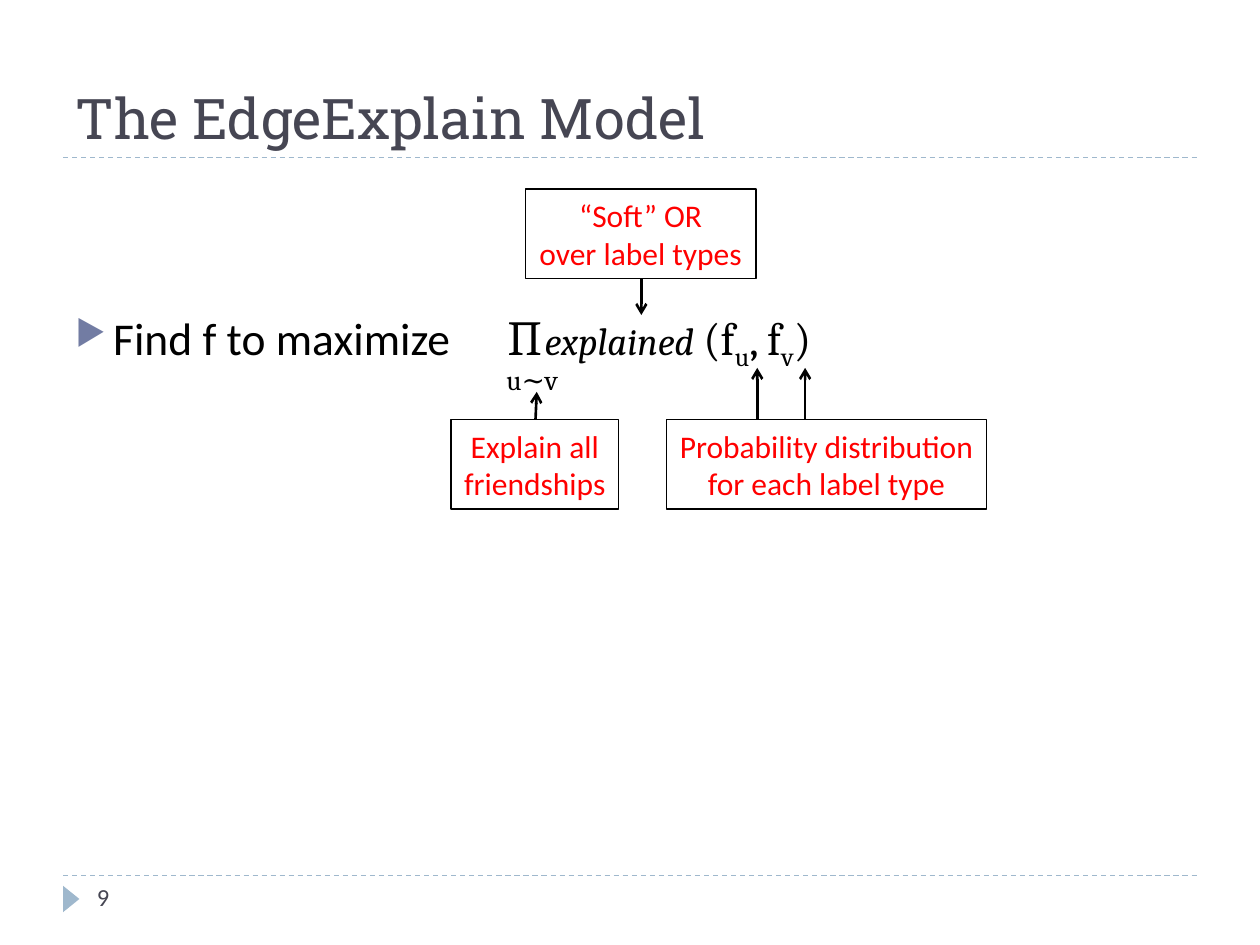
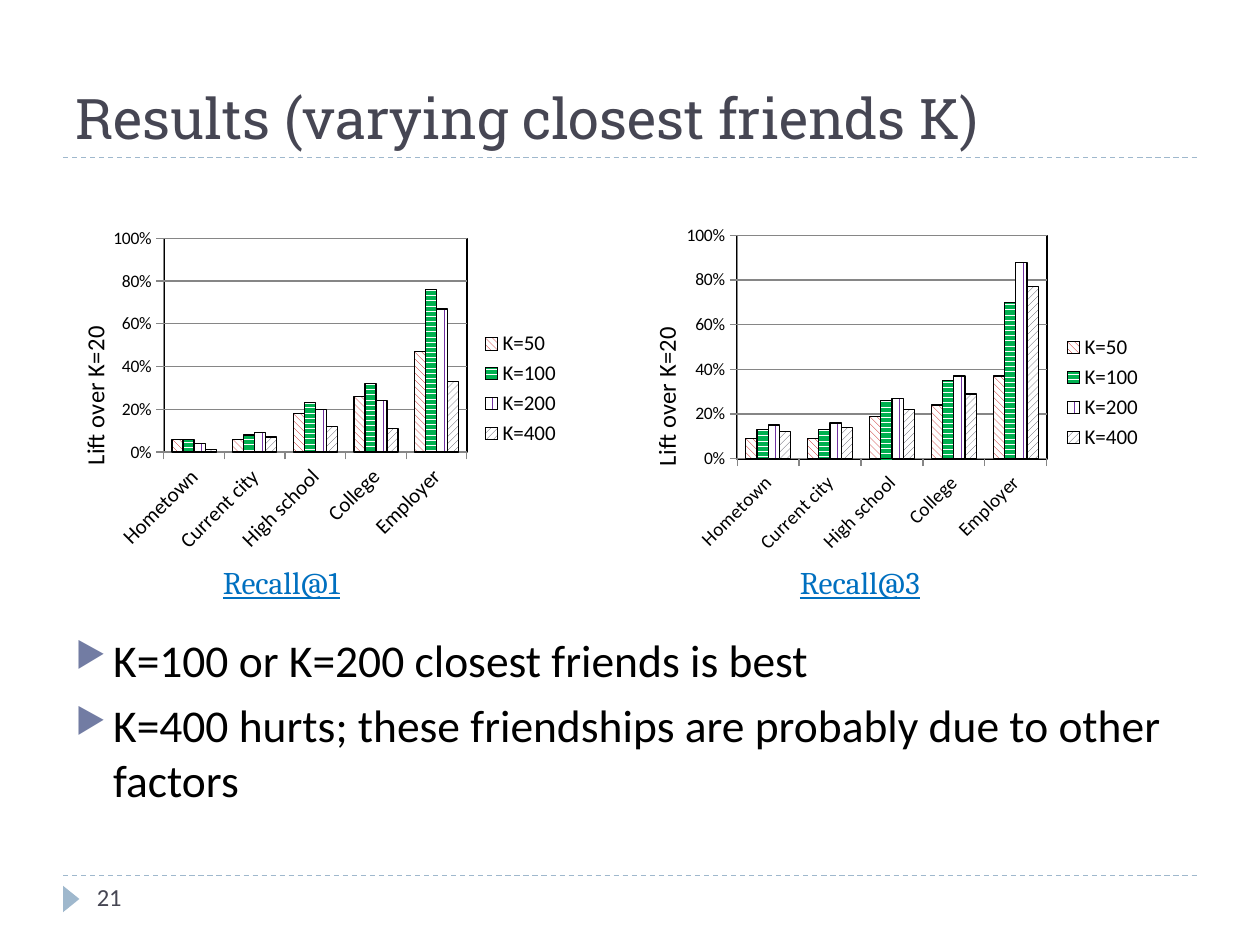
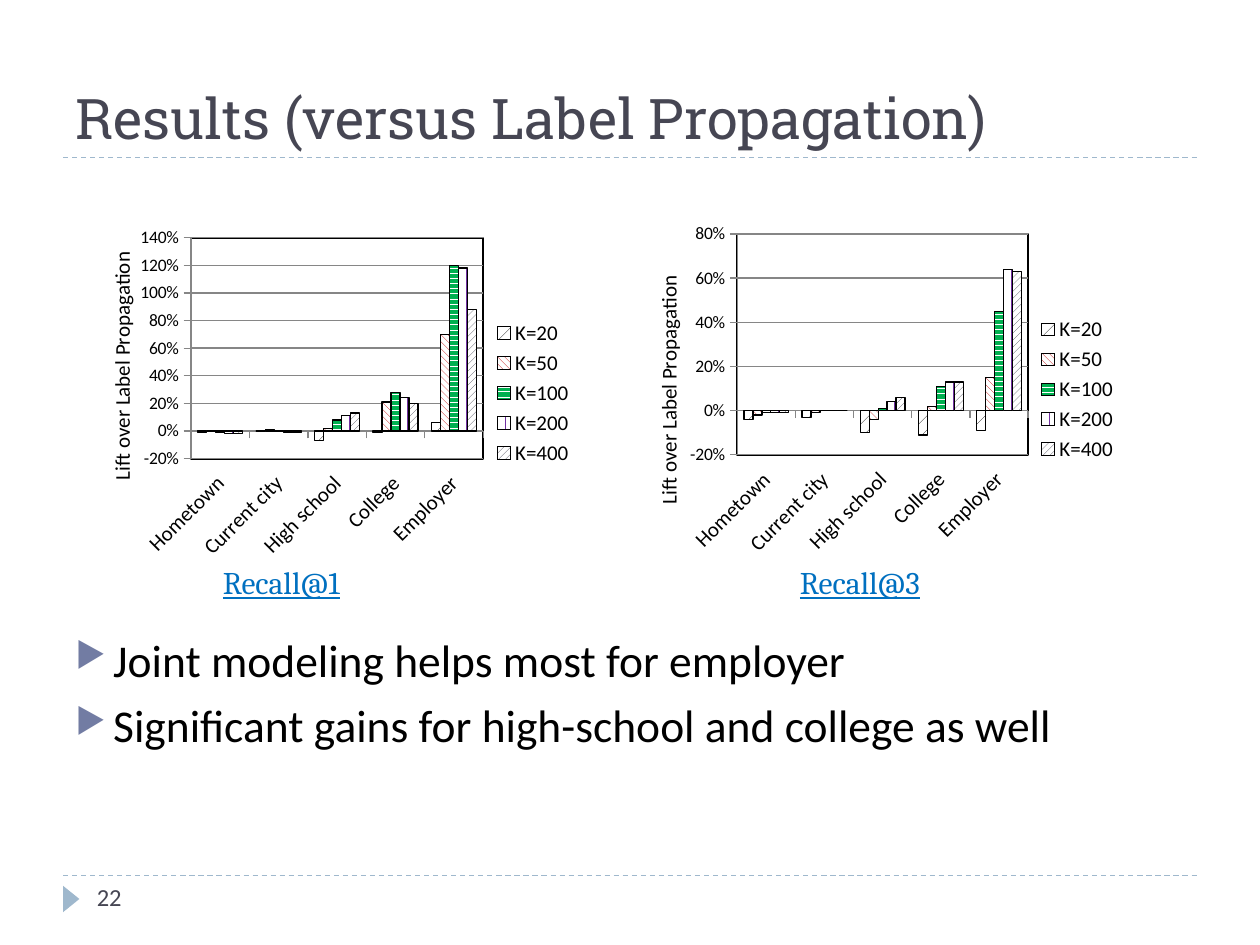
from lxml.etree import SubElement
from pptx import Presentation
from pptx.chart.data import CategoryChartData
from pptx.dml.color import RGBColor
from pptx.enum.chart import XL_CHART_TYPE, XL_LEGEND_POSITION, XL_TICK_LABEL_POSITION
from pptx.enum.dml import MSO_LINE, MSO_PATTERN
from pptx.enum.shapes import MSO_CONNECTOR, MSO_SHAPE
from pptx.enum.text import MSO_ANCHOR, PP_ALIGN
from pptx.oxml import parse_xml
from pptx.oxml.ns import nsdecls, qn
from pptx.util import Pt

PX = 9144  # 100 px to the inch
BLACK, WHITE, INK, RED, LINK = "000000", "FFFFFF", "464653", "FF0000", "0070C0"
RULE, BULLET, GRID = "9FB8CD", "727CA3", "868686"
BODY_FONT, MATH_FONT, TITLE_FONT = "Calibri", "Cambria", "Roboto Slab"
LABEL_TYPES = ["Hometown", "Current city", "High school", "College", "Employer"]
PATTERNS = {
    "K=20": (MSO_PATTERN.PERCENT_10, BLACK),
    "K=50": (MSO_PATTERN.WIDE_DOWNWARD_DIAGONAL, "C00000"),
    "K=100": (MSO_PATTERN.DARK_HORIZONTAL, "00B050"),
    "K=200": (MSO_PATTERN.DASHED_VERTICAL, "7030A0"),
    "K=400": (MSO_PATTERN.WIDE_UPWARD_DIAGONAL, INK),
}


def color(hex_value):
    return RGBColor.from_string(hex_value)


def px(*lengths):
    return [length * PX for length in lengths]


def set_font(font, size, name=BODY_FONT, ink=BLACK):
    font.size, font.name, font.bold = Pt(size), name, False
    font.color.rgb = color(ink)


def place_in_chart(element, **fractions):
    """Give a plot area or an axis title a manual layout, in fractions of the chart."""
    for old in element.findall(qn("c:layout")):
        element.remove(old)
    layout = parse_xml(f"<c:layout {nsdecls('c')}/>")
    manual = SubElement(layout, qn("c:manualLayout"))
    if "w" in fractions:
        SubElement(manual, qn("c:layoutTarget"), val="inner")
    for axis in "xy":
        SubElement(manual, qn(f"c:{axis}Mode"), val="edge")
    for side, fraction in fractions.items():
        SubElement(manual, qn(f"c:{side}"), val=str(fraction))
    element.insert(0 if element.find(qn("c:tx")) is None else 1, layout)


class Deck:
    def __init__(self):
        self.prs = Presentation()
        self.prs.slide_width, self.prs.slide_height = px(1000, 750)
        self.slide = None

    def start(self, title, number):
        """Add a slide with its title, rules, corner marker and number."""
        self.slide = self.prs.slides.add_slide(self.prs.slide_layouts[5])
        heading = self.slide.shapes.title
        heading.left, heading.top, heading.width, heading.height = px(50, 17, 900, 108)
        heading.text_frame.vertical_anchor = MSO_ANCHOR.BOTTOM
        paragraph = heading.text_frame.paragraphs[0]
        paragraph.alignment = PP_ALIGN.LEFT
        self.run(paragraph, title, 32, TITLE_FONT, INK)
        for y in (695, 125):
            self.line(50, y, 950, y, RULE, 0.75).line.dash_style = MSO_LINE.DASH
        marker = self.shape(MSO_SHAPE.ISOSCELES_TRIANGLE, 46, 707, 21, 13)
        marker.rotation = 90
        marker.fill.solid()
        marker.fill.fore_color.rgb = color(RULE)
        marker.line.fill.background()
        self.text(67, 695, 217, 40, str(number), 14, ink=INK)

    def run(self, paragraph, text, size, font=BODY_FONT, ink=BLACK,
            italic=None, underline=None, baseline=0):
        run = paragraph.add_run()
        run.text = text
        set_font(run.font, size, font, ink)
        run.font.italic, run.font.underline = italic, underline
        if baseline:
            run._r.get_or_add_rPr().set("baseline", str(baseline * 1000))

    def frame(self, x, y, w, h):
        """Add a wrapping text box and return its text frame."""
        frame = self.slide.shapes.add_textbox(*px(x, y, w, h)).text_frame
        frame.word_wrap = True
        return frame

    def text(self, x, y, w, h, text, size, font=BODY_FONT, ink=BLACK, **style):
        self.run(self.frame(x, y, w, h).paragraphs[0], text, size, font, ink, **style)

    def bullets(self, x, y, w, h, items):
        frame = self.frame(x, y, w, h)
        for index, item in enumerate(items):
            paragraph = frame.add_paragraph() if index else frame.paragraphs[0]
            paragraph.space_after = Pt(6)
            properties = paragraph._p.get_or_add_pPr()
            properties.set("marL", str(30 * PX))
            properties.set("indent", str(-30 * PX))
            tint = SubElement(properties, qn("a:buClr"))
            SubElement(tint, qn("a:srgbClr"), val=BULLET)
            SubElement(properties, qn("a:buSzPct"), val="76000")
            SubElement(properties, qn("a:buChar"), char="▶")
            self.run(paragraph, item, 26)

    def shape(self, kind, x, y, w, h):
        shape = self.slide.shapes.add_shape(kind, *px(x, y, w, h))
        shape.shadow.inherit = False
        return shape

    def callout(self, x, y, w, h, *lines):
        box = self.shape(MSO_SHAPE.RECTANGLE, x, y, w, h)
        box.fill.background()
        box.line.color.rgb, box.line.width = color(BLACK), Pt(0.75)
        box.text_frame.word_wrap = True
        paragraph = box.text_frame.paragraphs[0]
        paragraph.alignment = PP_ALIGN.CENTER
        for index, line in enumerate(lines):
            if index:
                paragraph.add_line_break()
            self.run(paragraph, line, 18, ink=RED)

    def line(self, x1, y1, x2, y2, ink=BLACK, width=1.5):
        line = self.slide.shapes.add_connector(MSO_CONNECTOR.STRAIGHT, *px(x1, y1, x2, y2))
        line.line.color.rgb, line.line.width = color(ink), Pt(width)
        SubElement(line._element.spPr, qn("a:effectLst"))
        return line

    def arrow(self, x1, y1, x2, y2):
        arrow = self.line(x1, y1, x2, y2)
        SubElement(arrow.line._get_or_add_ln(), qn("a:tailEnd"), type="arrow")

    def lift_chart(self, x, y, w, h, series, low, high, title, title_size, title_y, label_size=12):
        """Add a clustered column chart of the lift for each label type."""
        data = CategoryChartData(number_format="0%")
        data.categories = LABEL_TYPES
        for name, lifts in series.items():
            data.add_series(name, lifts)
        chart = self.slide.shapes.add_chart(
            XL_CHART_TYPE.COLUMN_CLUSTERED, *px(x, y, w, h), data).chart
        set_font(chart.font, 10)
        chart.has_title = False
        chart.has_legend = True
        chart.legend.position = XL_LEGEND_POSITION.RIGHT
        chart.legend.include_in_layout = False
        set_font(chart.legend.font, 12)

        plot = chart.plots[0]
        plot.gap_width, plot.overlap, plot.vary_by_categories = 150, 0, False
        for columns in plot.series:
            columns.invert_if_negative = False
            fill = columns.format.fill
            fill.patterned()
            fill.pattern, ink = PATTERNS[columns.name]
            fill.fore_color.rgb, fill.back_color.rgb = color(ink), color(WHITE)
            columns.format.line.color.rgb = color(BLACK)
            columns.format.line.width = Pt(0.75)

        lift, labels = chart.value_axis, chart.category_axis
        lift.minimum_scale, lift.maximum_scale, lift.major_unit = low, high, 0.2
        lift.tick_labels.number_format = "0%"
        lift.tick_labels.number_format_is_linked = False
        for rule in (lift.format, lift.major_gridlines.format, labels.format):
            rule.line.color.rgb, rule.line.width = color(GRID), Pt(0.75)
        self.run(lift.axis_title.text_frame.paragraphs[0], title, title_size)
        place_in_chart(lift.axis_title._element, x=0.06, y=title_y)
        set_font(labels.tick_labels.font, label_size)
        labels._element.find(qn("c:txPr")).find(qn("a:bodyPr")).set("rot", "-2700000")
        if low < 0:
            labels.tick_label_position = XL_TICK_LABEL_POSITION.LOW

        area = chart._chartSpace.chart.plotArea
        place_in_chart(area, x=0.23, y=0.05, w=0.57, h=0.64)
        area.append(parse_xml(
            f'<c:spPr {nsdecls("c", "a")}><a:noFill/><a:ln w="12700"><a:solidFill>'
            f'<a:srgbClr val="{BLACK}"/></a:solidFill></a:ln></c:spPr>'))

    def findings(self, *items):
        """Add the two chart captions and the bullets below them."""
        for x, caption in ((167, "Recall@1"), (625, "Recall@3")):
            self.text(x, 442, 142, 40, caption, 18, MATH_FONT, LINK, underline=True)
        self.bullets(50, 497, 900, 176, items)


def model_slide(deck):
    deck.start("The EdgeExplain Model", 9)
    deck.bullets(50, 241, 340, 60, ["Find f to maximize"])
    formula = deck.frame(391, 238, 400, 60).paragraphs[0]
    for text, size, style in (
        ("∏", 28, {}),
        ("explained", 22, {"italic": True}),
        (" ", 24, {}),
        ("(f", 26, {}),
        ("u", 26, {"baseline": -25}),
        (", f", 26, {}),
        ("v", 26, {"baseline": -25}),
        (")", 26, {}),
    ):
        deck.run(formula, text, size, MATH_FONT, **style)
    deck.text(392, 283, 67, 37, "u∼v", 16, MATH_FONT)
    deck.callout(417, 150, 183, 71, "“Soft” OR", "over label types")
    deck.arrow(509, 221, 509, 250)
    deck.callout(529, 333, 254, 71, "Probability distribution for each label type")
    for x in (601, 639):
        deck.arrow(x, 333, x, 292)
    deck.callout(358, 333, 133, 71, "Explain all friendships")
    deck.arrow(425, 333, 426, 311)


def closest_friends_slide(deck):
    deck.start("Results (varying closest friends K)", 21)
    recall_at_1 = {
        "K=50": [0.06, 0.06, 0.18, 0.26, 0.47],
        "K=100": [0.06, 0.08, 0.23, 0.32, 0.76],
        "K=200": [0.04, 0.09, 0.2, 0.24, 0.67],
        "K=400": [0.01, 0.07, 0.12, 0.11, 0.33],
    }
    recall_at_3 = {
        "K=50": [0.09, 0.09, 0.19, 0.24, 0.37],
        "K=100": [0.13, 0.13, 0.26, 0.35, 0.7],
        "K=200": [0.15, 0.16, 0.27, 0.37, 0.88],
        "K=400": [0.12, 0.14, 0.22, 0.29, 0.77],
    }
    title = "Lift over K=20"
    deck.lift_chart(33, 176, 422, 265, recall_at_1, 0, 1, title, 14, 0.3)
    deck.lift_chart(486, 173, 431, 277, recall_at_3, 0, 1, title, 14, 0.3, label_size=11)
    deck.findings(
        "K=100 or K=200 closest friends is best",
        "K=400 hurts; these friendships are probably due to other factors",
    )


def label_propagation_slide(deck):
    deck.start("Results (versus Label Propagation)", 22)
    recall_at_1 = {
        "K=20": [-0.01, 0, -0.07, -0.01, 0.06],
        "K=50": [0, 0.01, 0.02, 0.21, 0.7],
        "K=100": [-0.01, 0, 0.08, 0.28, 1.2],
        "K=200": [-0.02, -0.01, 0.11, 0.24, 1.18],
        "K=400": [-0.02, -0.01, 0.13, 0.2, 0.88],
    }
    recall_at_3 = {
        "K=20": [-0.04, -0.03, -0.1, -0.11, -0.09],
        "K=50": [-0.02, -0.01, -0.04, 0.02, 0.15],
        "K=100": [-0.01, 0, 0.01, 0.11, 0.45],
        "K=200": [-0.01, 0, 0.04, 0.13, 0.64],
        "K=400": [-0.01, 0, 0.06, 0.13, 0.63],
    }
    title = "Lift over Label Propagation"
    deck.lift_chart(58, 175, 407, 274, recall_at_1, -0.2, 1.4, title, 12, 0.08)
    deck.lift_chart(492, 172, 405, 274, recall_at_3, -0.2, 0.8, title, 12, 0.16)
    deck.findings(
        "Joint modeling helps most for employer",
        "Significant gains for high-school and college as well",
    )


def main():
    deck = Deck()
    model_slide(deck)
    closest_friends_slide(deck)
    label_propagation_slide(deck)
    deck.prs.save("out.pptx")


if __name__ == "__main__":
    main()
